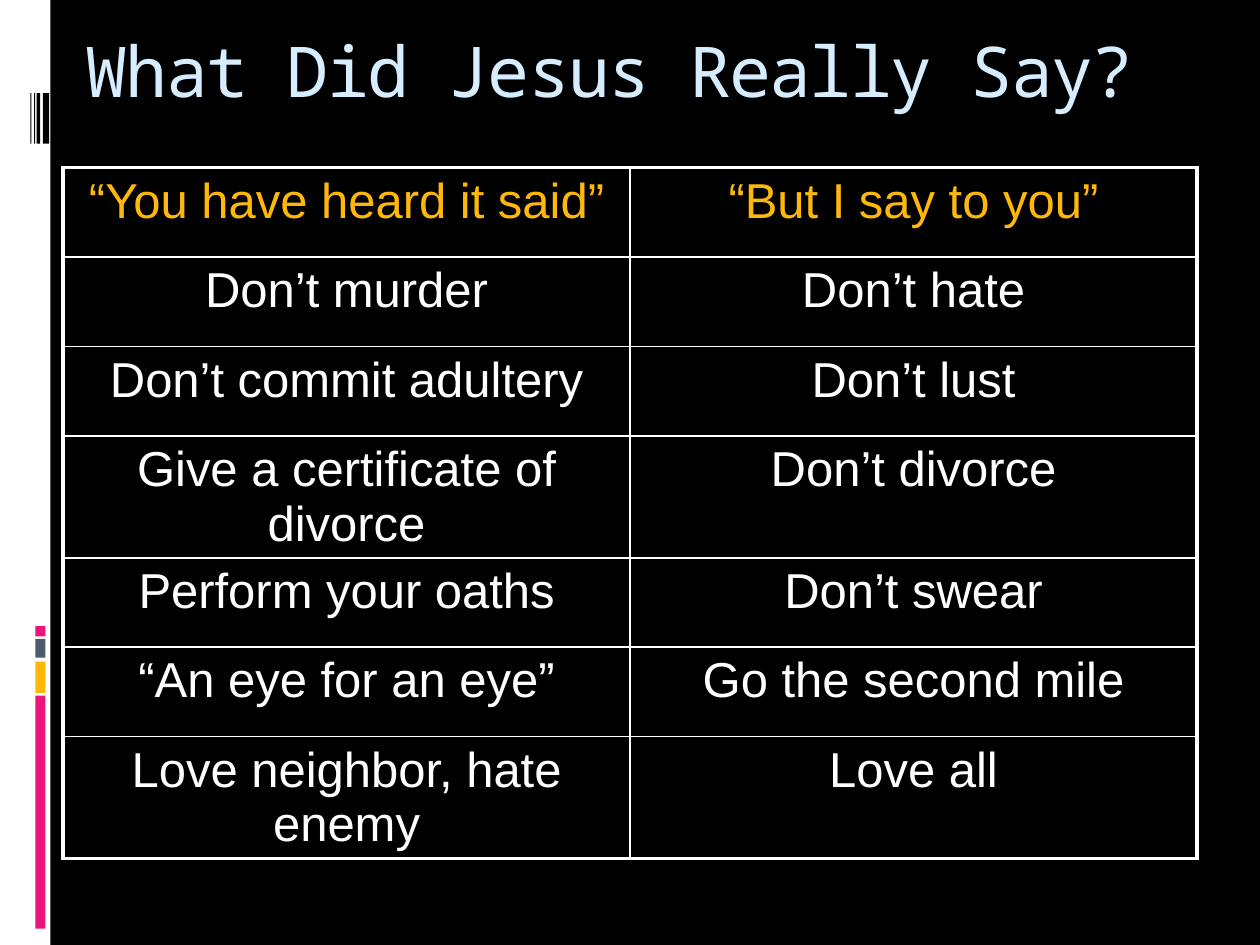
from dataclasses import dataclass

from lxml.etree import SubElement
from pptx import Presentation
from pptx.dml.color import RGBColor
from pptx.enum.text import MSO_ANCHOR, MSO_AUTO_SIZE, PP_ALIGN
from pptx.enum.shapes import MSO_SHAPE
from pptx.oxml.ns import qn
from pptx.util import Inches, Pt

TITLE = "What Did Jesus Really Say?"
SAYINGS = [
    ("“You have heard it said”", "“But I say to you”"),
    ("Don’t murder", "Don’t hate"),
    ("Don’t commit adultery", "Don’t lust"),
    ("Give a certificate of divorce", "Don’t divorce"),
    ("Perform your oaths", "Don’t swear"),
    ("“An eye for an eye”", "Go the second mile"),
    ("Love neighbor, hate enemy", "Love all"),
]


@dataclass(frozen=True)
class Theme:
    black: str = "000000"
    white: str = "FFFFFF"
    pink: str = "EA157A"
    gold: str = "FEB80A"
    slate: str = "4E5B6F"
    title_color: str = "D6ECFF"
    title_font: str = "Noto Sans Mono"
    body_font: str = "Arial"
    title_size: float = 40
    body_size: float = 28
    outer_line: float = 2.25
    inner_line: float = 1


THEME = Theme()

# Side decoration: (top, height, colour) and (left, width)
COLOR_BLOCKS = [
    (5.52, 1.85, THEME.pink),
    (5.25, 0.25, THEME.gold),
    (5.07, 0.15, THEME.slate),
    (4.97, 0.08, THEME.pink),
]
BARCODE_STRIPES = [(0.34, 0.05), (0.29, 0.03), (0.27, 0.01), (0.24, 0.01)]

TITLE_BOX = (0.58, 0.17, 9, 1.25)
TABLE_LEFT, TABLE_TOP, TABLE_WIDTH, ROW_HEIGHT = 0.5, 1.33, 9, 0.71


def add_block(slide, left, top, width, height, color):
    block = slide.shapes.add_shape(
        MSO_SHAPE.RECTANGLE, *map(Inches, (left, top, width, height)))
    block.shadow.inherit = False
    block.fill.solid()
    block.fill.fore_color.rgb = RGBColor.from_string(color)
    block.line.fill.background()


def style_font(font, name, size, color):
    for key, value in {"name": name, "size": Pt(size), "bold": False}.items():
        setattr(font, key, value)
    font.color.rgb = RGBColor.from_string(color)


def add_side_band(slide):
    add_block(slide, 0, 0, 0.4, 7.5, THEME.white)
    for top, height, color in COLOR_BLOCKS:
        add_block(slide, 0.28, top, 0.08, height, color)
    for left, width in BARCODE_STRIPES:
        add_block(slide, left, 0.74, width, 0.4, THEME.black)


def set_title(slide):
    title = slide.shapes.title
    title.left, title.top, title.width, title.height = map(Inches, TITLE_BOX)
    frame = title.text_frame
    frame.text = TITLE
    frame_format = {"word_wrap": True, "auto_size": MSO_AUTO_SIZE.NONE,
                    "vertical_anchor": MSO_ANCHOR.TOP}
    for key, value in frame_format.items():
        setattr(frame, key, value)
    paragraph = frame.paragraphs[0]
    paragraph.alignment = PP_ALIGN.LEFT
    run = paragraph.runs[0]
    style_font(run.font, THEME.title_font, THEME.title_size, THEME.title_color)
    run.font._element.set("spc", "-100")


def set_borders(cell, widths):
    """Put border lines, in left, right, top, bottom order, ahead of the fill."""
    properties = cell._tc.get_or_add_tcPr()
    for position, (side, width) in enumerate(zip("LRTB", widths)):
        line = SubElement(properties, qn(f"a:ln{side}"), w=str(Pt(width)))
        fill = SubElement(line, qn("a:solidFill"))
        SubElement(fill, qn("a:srgbClr"), val=THEME.white)
        properties.insert(position, line)


def fill_cell(cell, saying, color):
    cell.fill.background()
    cell.text = saying
    paragraph = cell.text_frame.paragraphs[0]
    paragraph.alignment = PP_ALIGN.CENTER
    spacing = SubElement(paragraph._p.get_or_add_pPr(), qn("a:spcBef"))
    SubElement(spacing, qn("a:spcPct"), val="20000")
    style_font(paragraph.runs[0].font, THEME.body_font, THEME.body_size, color)


def add_sayings_table(slide):
    row_count, column_count = len(SAYINGS), len(SAYINGS[0])
    table = slide.shapes.add_table(
        row_count, column_count, Inches(TABLE_LEFT), Inches(TABLE_TOP),
        Inches(TABLE_WIDTH), Inches(ROW_HEIGHT * row_count)).table
    table.horz_banding = False
    for r, sayings in enumerate(SAYINGS):
        for c, saying in enumerate(sayings):
            cell = table.cell(r, c)
            fill_cell(cell, saying, THEME.white if r else THEME.gold)
            on_edge = (c == 0, c == column_count - 1, r == 0, r == row_count - 1)
            set_borders(cell, [THEME.outer_line if edge else THEME.inner_line
                               for edge in on_edge])


def main():
    deck = Presentation()
    deck.slide_width, deck.slide_height = Inches(10), Inches(7.5)
    slide = deck.slides.add_slide(deck.slide_layouts[5])
    slide.background.fill.solid()
    slide.background.fill.fore_color.rgb = RGBColor.from_string(THEME.black)
    add_side_band(slide)
    set_title(slide)
    add_sayings_table(slide)
    deck.save("out.pptx")


if __name__ == "__main__":
    main()
